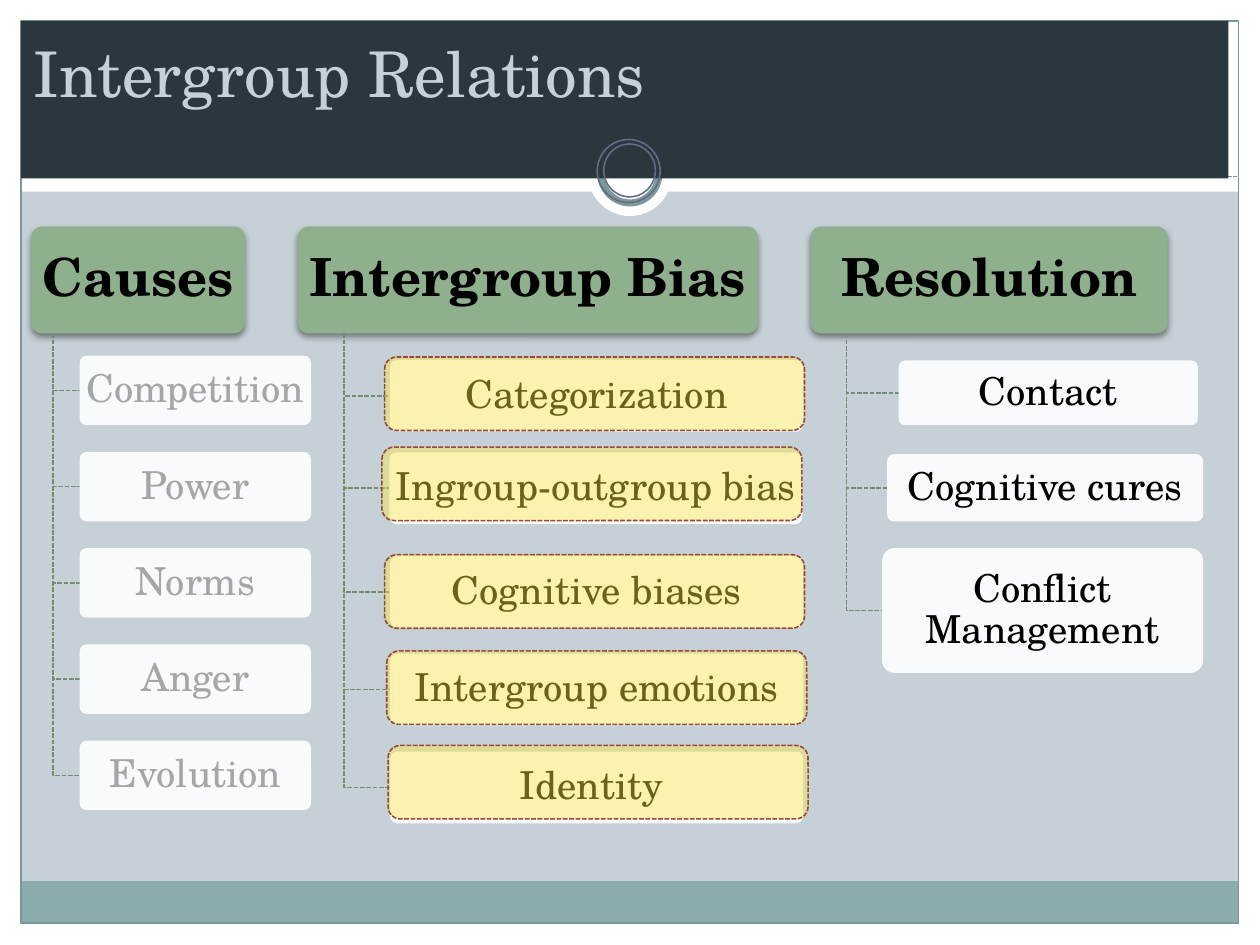
from lxml import etree
from pptx import Presentation
from pptx.dml.color import RGBColor
from pptx.enum.dml import MSO_LINE
from pptx.enum.shapes import MSO_CONNECTOR, MSO_SHAPE
from pptx.enum.text import MSO_ANCHOR, PP_ALIGN
from pptx.oxml.ns import qn
from pptx.util import Pt

RECT, OVAL, ROUND = MSO_SHAPE.RECTANGLE, MSO_SHAPE.OVAL, MSO_SHAPE.ROUNDED_RECTANGLE
DASH = MSO_LINE.SQUARE_DOT
TOP, MIDDLE = MSO_ANCHOR.TOP, MSO_ANCHOR.MIDDLE
LEFT, CENTER = PP_ALIGN.LEFT, PP_ALIGN.CENTER
FONT = "TeX Gyre Schola"
TEAL, WHITE, BLACK, GREY = "7C999A", "FFFFFF", "000000", "A6A6A6"

prs = Presentation()
prs.slide_width, prs.slide_height = Pt(720), Pt(540)
slide = prs.slides.add_slide(prs.slide_layouts[5])
shapes = slide.shapes
rgb = RGBColor.from_string
slide.background.fill.solid()
slide.background.fill.fore_color.rgb = rgb("C5D1D7")


def draw(kind, box, fill=None, alpha=100, line=None, width=0.9, dash=None):
    shape = shapes.add_shape(kind, *[Pt(v) for v in box])
    shape.shadow.inherit = False
    if fill:
        shape.fill.solid()
        shape.fill.fore_color.rgb = rgb(fill)
        if alpha < 100:
            tint = shape.fill._xPr.find(".//" + qn("a:srgbClr"))
            etree.SubElement(tint, qn("a:alpha"), val=str(alpha * 1000))
    else:
        shape.fill.background()
    if line:
        shape.line.color.rgb = rgb(line)
        shape.line.width = Pt(width)
        shape.line.dash_style = dash
    else:
        shape.line.fill.background()
    return shape


def write(shape, text, size, color, bold=False, pad=(0, 2), align=CENTER, anchor=MIDDLE):
    frame = shape.text_frame
    frame.text = text
    frame.word_wrap = True
    frame.vertical_anchor = anchor
    frame.margin_left = frame.margin_right = Pt(pad[0])
    frame.margin_top = frame.margin_bottom = Pt(pad[1])
    para = frame.paragraphs[0]
    para.alignment = align
    para.line_spacing = 0.9 if align == CENTER else 1.0
    para.font.name, para.font.size, para.font.bold = FONT, Pt(size), bold
    para.font.color.rgb = rgb(color)


# Page frame
for box in [(0, 528, 720, 12), (0, 0, 720, 109.5), (0, 0, 12, 540), (708, 0, 12, 540)]:
    draw(RECT, box, WHITE)
draw(RECT, (11.75, 503.5, 695.75, 24.5), "8CADAE")
draw(RECT, (12, 12, 695.75, 515.5), line=TEAL, width=0.75)
rule = shapes.add_connector(MSO_CONNECTOR.STRAIGHT, Pt(12), Pt(100.8), Pt(708), Pt(100.8))
rule.line.color.rgb = rgb(TEAL)
rule.line.width = Pt(0.75)
rule.line.dash_style = DASH
etree.SubElement(rule.element.spPr, qn("a:effectLst"))
draw(OVAL, (336, 75.5, 48, 48), WHITE)
draw(OVAL, (343.5, 83, 33, 33), WHITE, line=TEAL, width=4)

# Title band, raised above the frame
title = shapes.title
title.left, title.top, title.width, title.height = Pt(12), Pt(12), Pt(690), Pt(90)
title.fill.solid()
title.fill.fore_color.rgb = rgb("2A373D")
write(title, "Intergroup Relations", 36, "C5D1D7", pad=(7.2, 8), align=LEFT, anchor=TOP)
title.element.getparent().append(title.element)

# Columns: heading, left, width, stem, text colour, items with their boxes
causes = ["Competition", "Power", "Norms", "Anger", "Evolution"]
biases = [
    ("Categorization", 223, 205.75),
    ("Ingroup-outgroup bias", 222.5, 258.5),
    ("Cognitive biases", 223, 317.75),
    ("Intergroup emotions", 223, 373.5),
    ("Identity ", 223, 429.5),
]
cures = [
    ("Contact", (513.5, 206, 171, 37)),
    ("Cognitive cures", (507, 259.5, 180.5, 38.5)),
    ("Conflict Management", (504, 313.25, 183.5, 71.25)),
]
columns = [
    ("Causes", 18, 122, 30.25, GREY,
     [(name, (45.5, 203.25 + 55 * i, 132.25, 39.75)) for i, name in enumerate(causes)]),
    ("Intergroup Bias", 170.25, 262.75, 196.75, BLACK,
     [(name, (x, y, 236, 41)) for name, x, y in biases]),
    ("Resolution", 463.25, 204, 483.75, BLACK, cures),
]
for head, left, wide, stem, color, items in columns:
    card = draw(ROUND, (left, 129.5, wide, 61), "8FB08C")
    card.adjustments[0] = 0.1
    write(card, head, 30, BLACK, bold=True, pad=(2, 3))
    glow = etree.SubElement(card.element.spPr.find(qn("a:effectLst")), qn("a:outerShdw"),
                            blurRad=str(Pt(4)), dist=str(Pt(2)), dir="5400000", rotWithShape="0")
    shade = etree.SubElement(glow, qn("a:srgbClr"), val=BLACK)
    etree.SubElement(shade, qn("a:alpha"), val="45000")
    for name, box in items:
        x, y, w, h = box
        mid = Pt(y + h / 2)
        pen = shapes.build_freeform(Pt(stem), Pt(190.5))
        pen.add_line_segments([(Pt(stem), mid), (Pt(x), mid)], close=False)
        branch = pen.convert_to_shape()
        branch.shadow.inherit = False
        branch.fill.background()
        branch.line.color.rgb = rgb("738D70")
        branch.line.width = Pt(0.9)
        branch.line.dash_style = DASH
        card = draw(ROUND, box, WHITE, alpha=90)
        card.adjustments[0] = 0.1
        write(card, name, 22, color)

# Rings on the title band
draw(OVAL, (341.25, 79.75, 36, 36), line="646B86")
draw(OVAL, (345, 82.25, 29.5, 30.25), line="646B86")

# Highlights over the bias items
for x, y in [(219.75, 204), (218.25, 255.5), (219.75, 317), (221, 372), (221.75, 426)]:
    draw(ROUND, (x, y, 240, 42), "FFE947", alpha=42, line="9B4936", dash=DASH)

prs.save("out.pptx")
